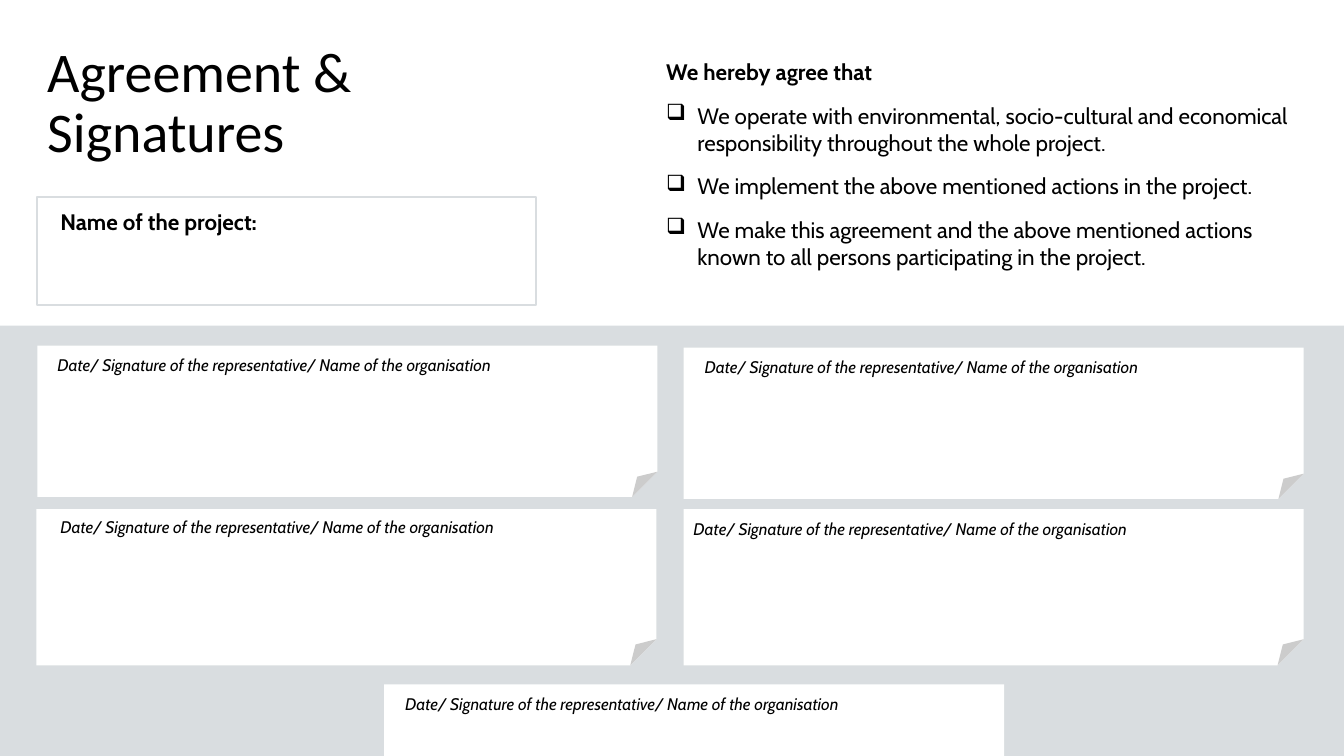
import pptx
import pptx.util
import pptx.dml.color
import pptx.enum.shapes
import pptx.enum.text
import lxml.etree
from pptx.util import Inches, Pt

BLACK = pptx.dml.color.RGBColor(0x00, 0x00, 0x00)
WHITE = pptx.dml.color.RGBColor(0xFF, 0xFF, 0xFF)
GREY = pptx.dml.color.RGBColor(0xD9, 0xDD, 0xE0)
KIND = pptx.enum.shapes.MSO_SHAPE
NOTE = "Date/ Signature of the representative/ Name of the organisation"
TERMS = [
    "We operate with environmental, socio-cultural and economical "
    "responsibility throughout the whole project.",
    "We implement the above mentioned actions in the project.",
    "We make this agreement and the above mentioned actions known to all "
    "persons participating in the project.",
]
CARDS = [
    (0.37, 3.43, 1.5, 0.1, 0.04),
    (6.78, 3.45, 1.5, 0.11, 0.04),
    (0.36, 5.05, 1.55, 0.14, 0.03),
    (6.78, 5.05, 1.55, 0, 0.05),
    (3.81, 6.79, 1.34, 0.11, 0.04),
]


def add_box(slide, kind, x, y, w, h, fill, line=None):
    box = slide.shapes.add_shape(kind, Inches(x), Inches(y), Inches(w), Inches(h))
    box.shadow.inherit = False
    box.fill.solid()
    box.fill.fore_color.rgb = fill
    if line is None:
        box.line.fill.background()
    else:
        box.line.color.rgb = line
        box.line.width = Pt(1.5)


def add_frame(slide, x, y, w, h):
    box = slide.shapes.add_textbox(Inches(x), Inches(y), Inches(w), Inches(h))
    box.text_frame.word_wrap = True
    return box.text_frame


def add_run(para, text, size, face="Cabin", bold=False, slant=False):
    run = para.add_run()
    run.text = text
    font = run.font
    font.name = face
    font.size = Pt(size)
    font.bold = bold
    font.italic = slant
    font.color.rgb = BLACK


def add_mark(para):
    props = para._p.get_or_add_pPr()
    props.set("marL", str(Inches(0.31)))
    props.set("indent", str(-Inches(0.31)))
    mark = lxml.etree.SubElement(props, pptx.oxml.ns.qn("a:buChar"))
    mark.set("char", "❑")


def add_title(slide, x, y, w, h):
    frame = add_frame(slide, x, y, w, h)
    frame.vertical_anchor = pptx.enum.text.MSO_ANCHOR.MIDDLE
    para = frame.paragraphs[0]
    para.line_spacing = 0.9
    add_run(para, "Agreement &", 40, "Calibri")
    para.add_line_break()
    add_run(para, "Signatures", 40, "Calibri")


def add_terms(slide, x, y, w, h):
    frame = add_frame(slide, x, y, w, h)
    head = frame.paragraphs[0]
    head.space_after = Pt(12)
    add_run(head, "We hereby agree that", 16, bold=True)
    for term in TERMS:
        para = frame.add_paragraph()
        add_mark(para)
        para.space_after = Pt(12)
        add_run(para, term, 16)


def add_name(slide, x, y, w, h):
    add_box(slide, KIND.RECTANGLE, x, y, w, h, WHITE, GREY)
    frame = add_frame(slide, x + 0.13, y + 0.07, w - 0.42, 0.37)
    add_run(frame.paragraphs[0], "Name of the project:", 16, bold=True)


def add_card(slide, x, y, h, dx, dy):
    add_box(slide, KIND.FOLDED_CORNER, x, y, 6.15, h, WHITE)
    frame = add_frame(slide, x + dx, y + dy, 5.93, 0.61)
    add_run(frame.paragraphs[0], NOTE, 12, slant=True)


def main():
    deck = pptx.Presentation()
    deck.slide_width = Inches(13.33)
    deck.slide_height = Inches(7.5)
    slide = deck.slides.add_slide(deck.slide_layouts[6])
    add_title(slide, 0.37, 0.31, 12.58, 1.45)
    add_terms(slide, 6.51, 0.53, 6.37, 2.69)
    add_box(slide, KIND.RECTANGLE, 0, 3.23, 13.33, 5.04, GREY)
    for card in CARDS:
        add_card(slide, *card)
    add_name(slide, 0.37, 1.95, 4.95, 1.08)
    deck.save("out.pptx")


if __name__ == "__main__":
    main()
